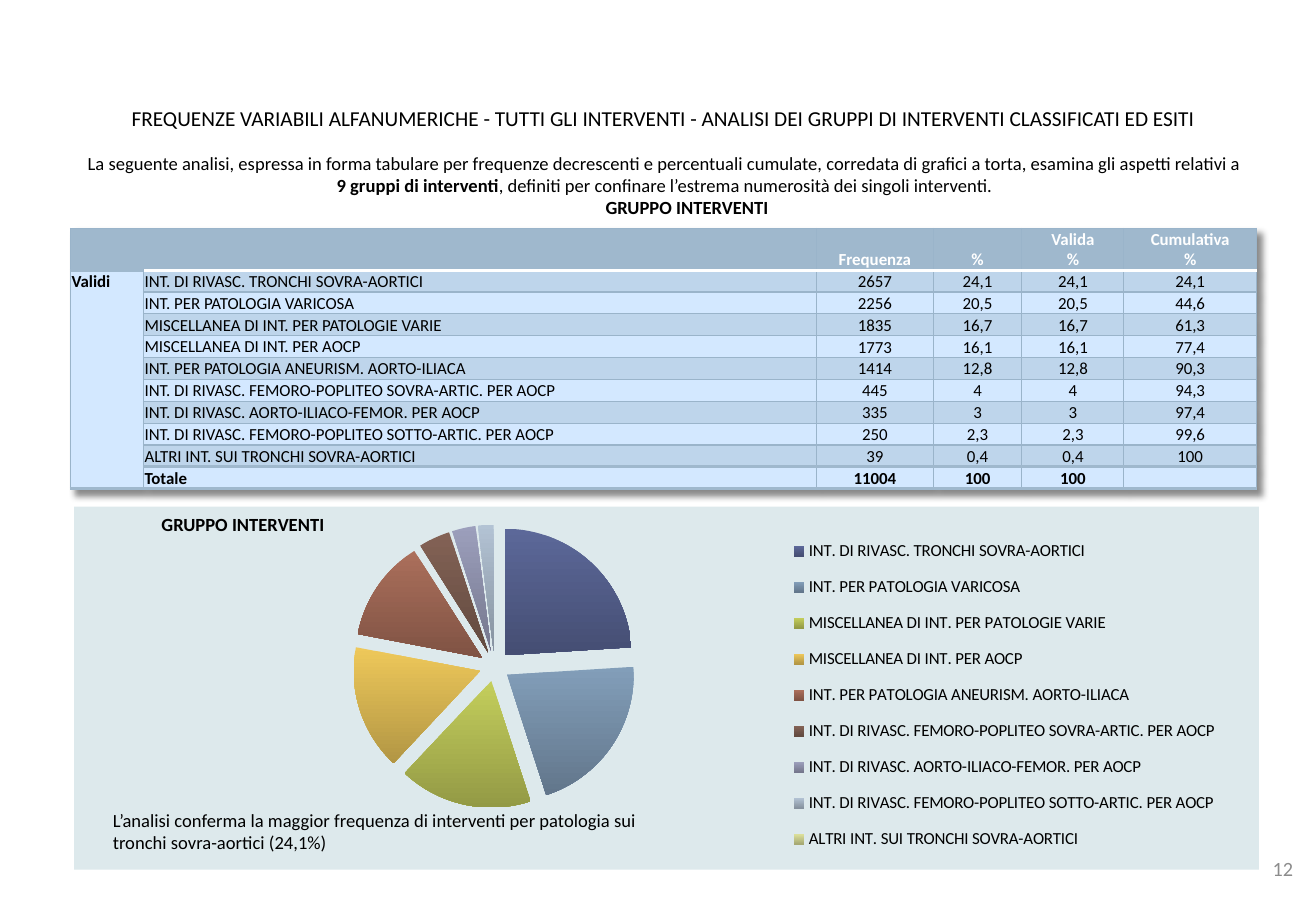
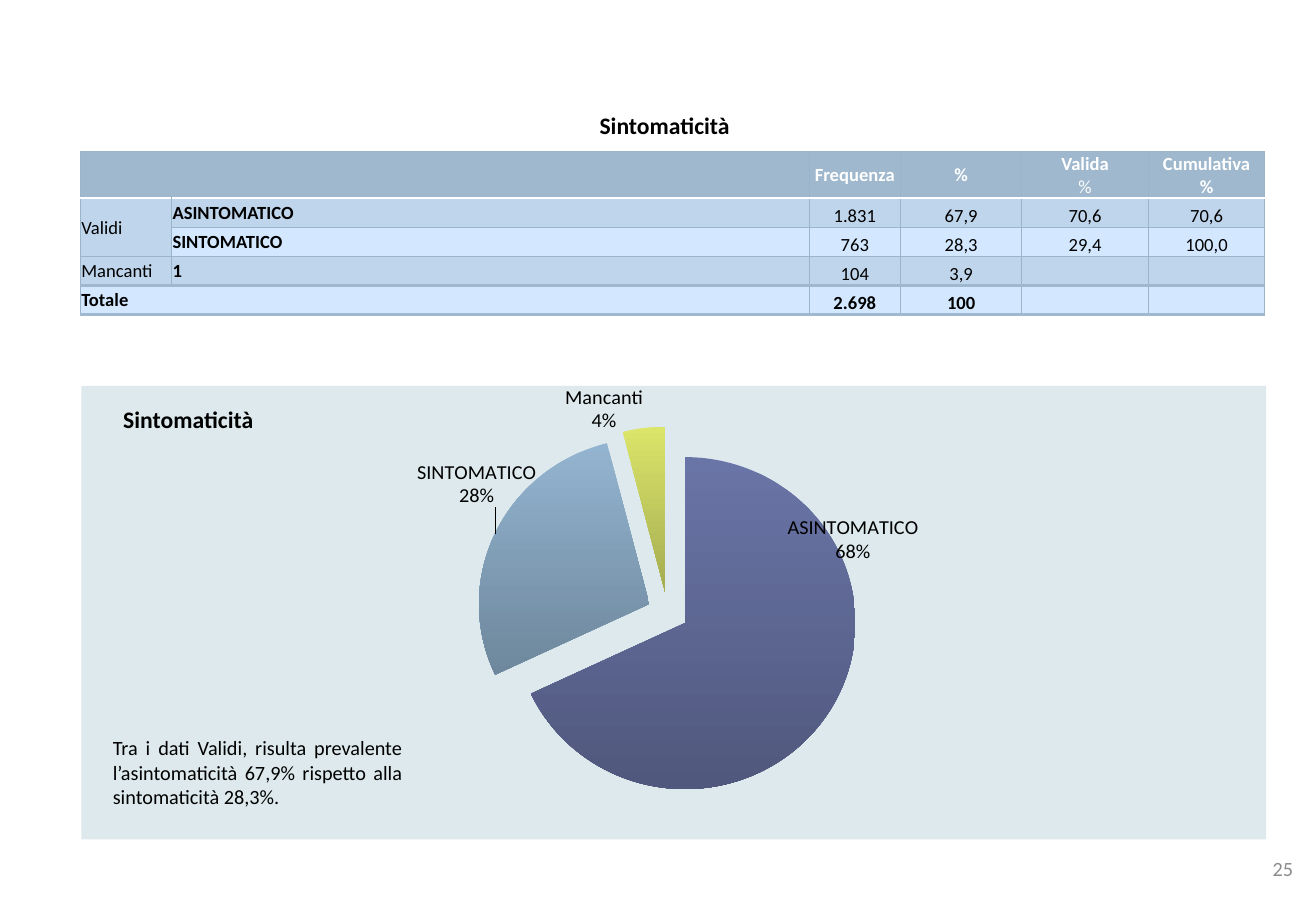
from lxml import etree
from pptx import Presentation
from pptx.chart.data import CategoryChartData
from pptx.dml.color import RGBColor
from pptx.enum.chart import XL_CHART_TYPE, XL_LABEL_POSITION, XL_LEGEND_POSITION
from pptx.enum.text import MSO_ANCHOR as ANCHOR, PP_ALIGN as ALIGN
from pptx.oxml import parse_xml
from pptx.oxml.ns import nsdecls, qn
from pptx.util import Inches, Pt

FONT = "Calibri"
BLACK = RGBColor(0x00, 0x00, 0x00)
WHITE = RGBColor(0xFF, 0xFF, 0xFF)
GREY = RGBColor(0x8C, 0x8C, 0x8C)
HEADER = RGBColor(0x9F, 0xB8, 0xCD)
GRID = RGBColor(0x9A, 0xB4, 0xCA)
BAND = RGBColor(0xBE, 0xD5, 0xEB)
PLAIN = RGBColor(0xD3, 0xE8, 0xFF)
PANEL = RGBColor(0xDD, 0xE9, 0xEC)
GROUP_COLOURS = [RGBColor.from_string(c) for c in (
    "5C6899", "829EB9", "C4CE5C", "EEC85A", "AB6F5B",
    "836255", "9C9FBC", "B3C3D4", "DDE19B")]
SYMPTOM_COLOURS = [RGBColor.from_string(c) for c in ("6A75A7", "93B4D0", "DBE56A")]
THIN_EDGE = (GRID, 0.75)
THICK_EDGE = (HEADER, 2)
WHITE_EDGE = (WHITE, 2)

TABLE_WIDTH = 9.75
HEADINGS = ["", "", "Frequenza", "%", "Valida\n%", "Cumulativa\n%"]
GROUPS = [
    ("INT. DI RIVASC. TRONCHI SOVRA-AORTICI", "2657", "24,1", "24,1", "24,1"),
    ("INT. PER PATOLOGIA VARICOSA", "2256", "20,5", "20,5", "44,6"),
    ("MISCELLANEA DI INT. PER PATOLOGIE VARIE", "1835", "16,7", "16,7", "61,3"),
    ("MISCELLANEA DI INT. PER AOCP", "1773", "16,1", "16,1", "77,4"),
    ("INT. PER PATOLOGIA ANEURISM. AORTO-ILIACA", "1414", "12,8", "12,8", "90,3"),
    ("INT. DI RIVASC. FEMORO-POPLITEO SOVRA-ARTIC. PER AOCP", "445", "4", "4", "94,3"),
    ("INT. DI RIVASC. AORTO-ILIACO-FEMOR. PER AOCP", "335", "3", "3", "97,4"),
    ("INT. DI RIVASC. FEMORO-POPLITEO SOTTO-ARTIC. PER AOCP", "250", "2,3", "2,3", "99,6"),
    ("ALTRI INT. SUI TRONCHI SOVRA-AORTICI", "39", "0,4", "0,4", "100"),
]
GROUP_SHARES = (24, 21, 17, 16, 13, 4, 3, 2, 0)
SYMPTOMS = [
    ("Validi", "ASINTOMATICO", "1.831", "67,9", "70,6", "70,6"),
    ("", "SINTOMATICO", "763", "28,3", "29,4", "100,0"),
    ("Mancanti", "1", "104", "3,9", "", ""),
    ("Totale", "", "2.698", "100", "", ""),
]
SYMPTOM_SHARES = (68, 28, 4)


def add_run(paragraph, text, size, bold=False, colour=BLACK):
    run = paragraph.add_run()
    run.text = text
    run.font.name = FONT
    run.font.size = Pt(size)
    run.font.bold = bold
    run.font.color.rgb = colour


def add_text(slide, box, runs, size, align=ALIGN.CENTER, anchor=ANCHOR.TOP, colour=BLACK):
    """Add a wrapped one-paragraph box; runs are (text, bold) pairs."""
    frame = slide.shapes.add_textbox(*map(Inches, box)).text_frame
    frame.word_wrap = True
    frame.vertical_anchor = anchor
    paragraph = frame.paragraphs[0]
    paragraph.alignment = align
    for text, bold in runs:
        add_run(paragraph, text, size, bold, colour)


def add_slide(prs, number):
    """Add a blank slide with its page number."""
    slide = prs.slides.add_slide(prs.slide_layouts[6])
    add_text(slide, (9.86, 6.95, 0.88, 0.4), [(number, False)], 12,
             ALIGN.RIGHT, ANCHOR.MIDDLE, GREY)
    return slide


def set_borders(cell, top, bottom):
    """Set all four edges, replacing any set before."""
    properties = cell._tc.get_or_add_tcPr()
    edges = (("lnL", THIN_EDGE), ("lnR", THIN_EDGE), ("lnT", top), ("lnB", bottom))
    for i, (tag, (colour, width)) in enumerate(edges):
        for old in properties.findall(qn(f"a:{tag}")):
            properties.remove(old)
        properties.insert(i, parse_xml(
            f'<a:{tag} {nsdecls("a")} w="{Pt(width)}"><a:solidFill>'
            f'<a:srgbClr val="{colour}"/></a:solidFill></a:{tag}>'))


def fill_cell(cell, colour):
    cell.fill.solid()
    cell.fill.fore_color.rgb = colour


def write_cell(cell, text, size, bold, colour, align, anchor):
    cell.margin_left = cell.margin_right = cell.margin_top = Inches(0.01)
    cell.margin_bottom = 0
    cell.vertical_anchor = anchor
    frame = cell.text_frame
    for i, line in enumerate(text.split("\n")):
        paragraph = frame.paragraphs[0] if i == 0 else frame.add_paragraph()
        paragraph.alignment = align
        if line:
            add_run(paragraph, line, size, bold, colour)
        else:
            end = etree.SubElement(paragraph._p, qn("a:endParaRPr"))
            end.set("sz", str(size * 100))


def add_frequency_table(slide, left, top, widths, heights, rows, size,
                        bold_column, header_anchor, merges):
    """Add a banded table whose last row is the total; heights are (header, row)."""
    height = heights[0] + heights[1] * len(rows)
    table = slide.shapes.add_table(
        len(rows) + 1, len(widths), Inches(left), Inches(top),
        Inches(TABLE_WIDTH), Inches(height)).table
    table.first_row = table.horz_banding = False
    for column, width in zip(table.columns, widths):
        column.width = Inches(width)
    for r, values in enumerate([HEADINGS, *rows]):
        table.rows[r].height = Inches(heights[min(r, 1)])
        is_header, is_total = r == 0, r == len(rows)
        above = WHITE_EDGE if r == 1 else THICK_EDGE if is_total else THIN_EDGE
        below = (WHITE_EDGE if is_header
                 else THICK_EDGE if r >= len(rows) - 1 else THIN_EDGE)
        for c, text in enumerate(values):
            cell = table.cell(r, c)
            set_borders(cell, above, below)
            fill_cell(cell, HEADER if is_header else BAND if r % 2 else PLAIN)
            write_cell(cell, text, size,
                       is_header or is_total or c == bold_column,
                       WHITE if is_header else BLACK,
                       ALIGN.CENTER if c > 1 else ALIGN.LEFT,
                       header_anchor if is_header
                       else ANCHOR.BOTTOM if c > 1 else ANCHOR.MIDDLE)
    for first, last in merges:
        table.cell(*first).merge(table.cell(*last))
    return table


def add_table_shadow(table):
    table._tbl.tblPr.insert(0, parse_xml(
        f'<a:effectLst {nsdecls("a")}><a:outerShdw blurRad="50800" dist="50800" '
        'dir="2700000" algn="tl" rotWithShape="0"><a:srgbClr val="000000">'
        '<a:alpha val="45000"/></a:srgbClr></a:outerShdw></a:effectLst>'))


def set_layout(element, index, **settings):
    """Give a chart part a manual layout as its child at index."""
    for old in element.findall(qn("c:layout")):
        element.remove(old)
    inner = "".join(f'<c:{key} val="{value}"/>' for key, value in settings.items())
    element.insert(index, parse_xml(
        f'<c:layout {nsdecls("c")}><c:manualLayout>{inner}</c:manualLayout></c:layout>'))


def darken(colour):
    return RGBColor(*(round(part * 0.75) for part in colour))


def add_pie(slide, box, categories, values, colours, plot_box):
    """Add an exploded pie with shaded slices on a tinted panel."""
    data = CategoryChartData()
    data.categories = categories
    data.add_series("Series 1", values)
    chart = slide.shapes.add_chart(XL_CHART_TYPE.PIE, *map(Inches, box), data).chart
    chart.has_title = False
    chart.has_legend = False
    chart.font.name = FONT
    chart.font.size = Pt(10)
    chart.font.color.rgb = BLACK
    chart.plots[0].vary_by_categories = True
    series = chart.plots[0].series[0]
    for i, colour in enumerate(colours):
        fill = series.points[i].format.fill
        fill.gradient()
        fill.gradient_angle = 270
        for stop, shade in zip(fill.gradient_stops, (colour, darken(colour))):
            stop.color.rgb = shade
    series._element.find(qn("c:tx")).addnext(
        parse_xml(f'<c:explosion {nsdecls("c")} val="12"/>'))
    space = chart._chartSpace
    space.find(qn("c:chart")).addnext(parse_xml(
        f'<c:spPr {nsdecls("c", "a")}><a:solidFill><a:srgbClr val="{PANEL}"/>'
        '</a:solidFill><a:ln><a:noFill/></a:ln></c:spPr>'))
    x, y, w, h = plot_box
    set_layout(next(space.iter(qn("c:plotArea"))), 0, layoutTarget="inner",
               xMode="edge", yMode="edge", x=x, y=y, w=w, h=h)
    return chart


def add_legend(chart, x, y, w, h):
    chart.has_legend = True
    legend = chart.legend
    legend.position = XL_LEGEND_POSITION.RIGHT
    legend.include_in_layout = False
    legend.font.size = Pt(10)
    legend.font.name = FONT
    set_layout(legend._element, 1, xMode="edge", yMode="edge", x=x, y=y, w=w, h=h)


def show_category_and_percent(element):
    """Set the shown parts of a label element, on separate lines."""
    for tag, value in (("showVal", "0"), ("showCatName", "1"), ("showPercent", "1")):
        element.find(qn(f"c:{tag}")).set("val", value)
    separator = etree.Element(qn("c:separator"))
    separator.text = "\n"
    element.find(qn("c:showBubbleSize")).addnext(separator)


def add_slice_labels(chart, offsets, custom):
    """Label each slice, moved by its offset; custom maps a slice to its lines."""
    series = chart.plots[0].series[0]
    labels = series.data_labels
    labels.font.size = Pt(12)
    labels.font.name = FONT
    labels.position = XL_LABEL_POSITION.OUTSIDE_END
    for i in range(len(offsets)):
        label = series.points[i].data_label
        if i in custom:
            frame = label.text_frame
            for n, line in enumerate(custom[i]):
                add_run(frame.paragraphs[0] if n == 0 else frame.add_paragraph(), line, 12)
        else:
            label.font.size = Pt(12)
            label.font.name = FONT
        label.position = XL_LABEL_POSITION.OUTSIDE_END
    label_set = series._element.find(qn("c:dLbls"))
    show_category_and_percent(label_set)
    for element, (x, y) in zip(label_set.findall(qn("c:dLbl")), offsets):
        show_category_and_percent(element)
        set_layout(element, 1, x=x, y=y)


def build_groups(prs):
    slide = add_slide(prs, "12")
    add_text(slide, (0.58, 0.77, 9.75, 0.4), [(
        "FREQUENZE VARIABILI ALFANUMERICHE - TUTTI GLI INTERVENTI - "
        "ANALISI DEI GRUPPI DI INTERVENTI CLASSIFICATI ED ESITI", False)],
        12.6, anchor=ANCHOR.MIDDLE)
    rows = [("Validi" if i == 0 else "", *group) for i, group in enumerate(GROUPS)]
    rows.append(("", "Totale", "11004", "100", "100", ""))
    table = add_frequency_table(
        slide, 0.58, 1.88, (0.6, 5.54, 0.96, 0.73, 0.84, 1.09), (0.33, 0.18), rows,
        10, 0, ANCHOR.BOTTOM, [((0, 0), (0, 1)), ((1, 0), (10, 0))])
    valid = table.cell(1, 0)
    valid.vertical_anchor = ANCHOR.TOP
    fill_cell(valid, PLAIN)
    set_borders(valid, THICK_EDGE, THICK_EDGE)
    add_table_shadow(table)
    pie = add_pie(slide, (0.61, 4.17, 9.75, 2.99), [group[0] for group in GROUPS],
                  GROUP_SHARES, GROUP_COLOURS, (0, 0.05, 0.71, 0.78))
    add_legend(pie, 0.59, 0.05, 0.39, 0.94)
    add_text(slide, (0.58, 1.2, 9.78, 0.47), [
        ("La seguente analisi, espressa in forma tabulare per frequenze decrescenti e "
         "percentuali cumulate, corredata di grafici a torta, esamina gli aspetti "
         "relativi a ", False),
        ("9 gruppi di interventi", True),
        (", definiti per confinare l’estrema numerosità dei singoli interventi.", False)], 11)
    for box in ((0.84, 1.56, 9.63, 0.29), (1.08, 4.17, 1.84, 0.29)):
        add_text(slide, box, [("GRUPPO INTERVENTI", True)], 11)
    add_text(slide, (0.83, 6.61, 4.69, 0.47), [(
        "L’analisi conferma la maggior frequenza di interventi per patologia sui "
        "tronchi sovra-aortici (24,1%)", False)], 11, ALIGN.LEFT)


def build_symptoms(prs):
    slide = add_slide(prs, "25")
    table = add_frequency_table(
        slide, 0.66, 1.25, (0.75, 5.25, 0.75, 1, 1.04, 0.96), (0.38, 0.24), SYMPTOMS,
        11, 1, ANCHOR.MIDDLE, [((0, 0), (0, 1)), ((1, 0), (2, 0)), ((4, 0), (4, 1))])
    table.cell(0, 4).text_frame.paragraphs[1].runs[0].font.bold = False
    pie = add_pie(slide, (0.67, 3.08, 9.75, 3.83), [row[1] for row in SYMPTOMS[:3]],
                  SYMPTOM_SHARES, SYMPTOM_COLOURS, (0, 0.09, 0.99, 0.82))
    add_slice_labels(pie, [(-0.04, -0.44), (0.04, -0.05), (0, 0.01)],
                     {2: ("Mancanti", "4%")})
    for box in ((4.75, 0.83, 1.44, 0.4), (0.83, 3.25, 1.44, 0.4)):
        add_text(slide, box, [("Sintomaticità", True)], 14, anchor=ANCHOR.MIDDLE)
    add_text(slide, (0.83, 6, 2.58, 0.71), [(
        "Tra i dati Validi, risulta prevalente l’asintomaticità 67,9% rispetto alla "
        "sintomaticità 28,3%.", False)], 12, ALIGN.JUSTIFY, ANCHOR.MIDDLE)


def main():
    prs = Presentation()
    prs.slide_width, prs.slide_height = Inches(10.83), Inches(7.5)
    build_groups(prs)
    build_symptoms(prs)
    prs.save("out.pptx")


if __name__ == "__main__":
    main()
